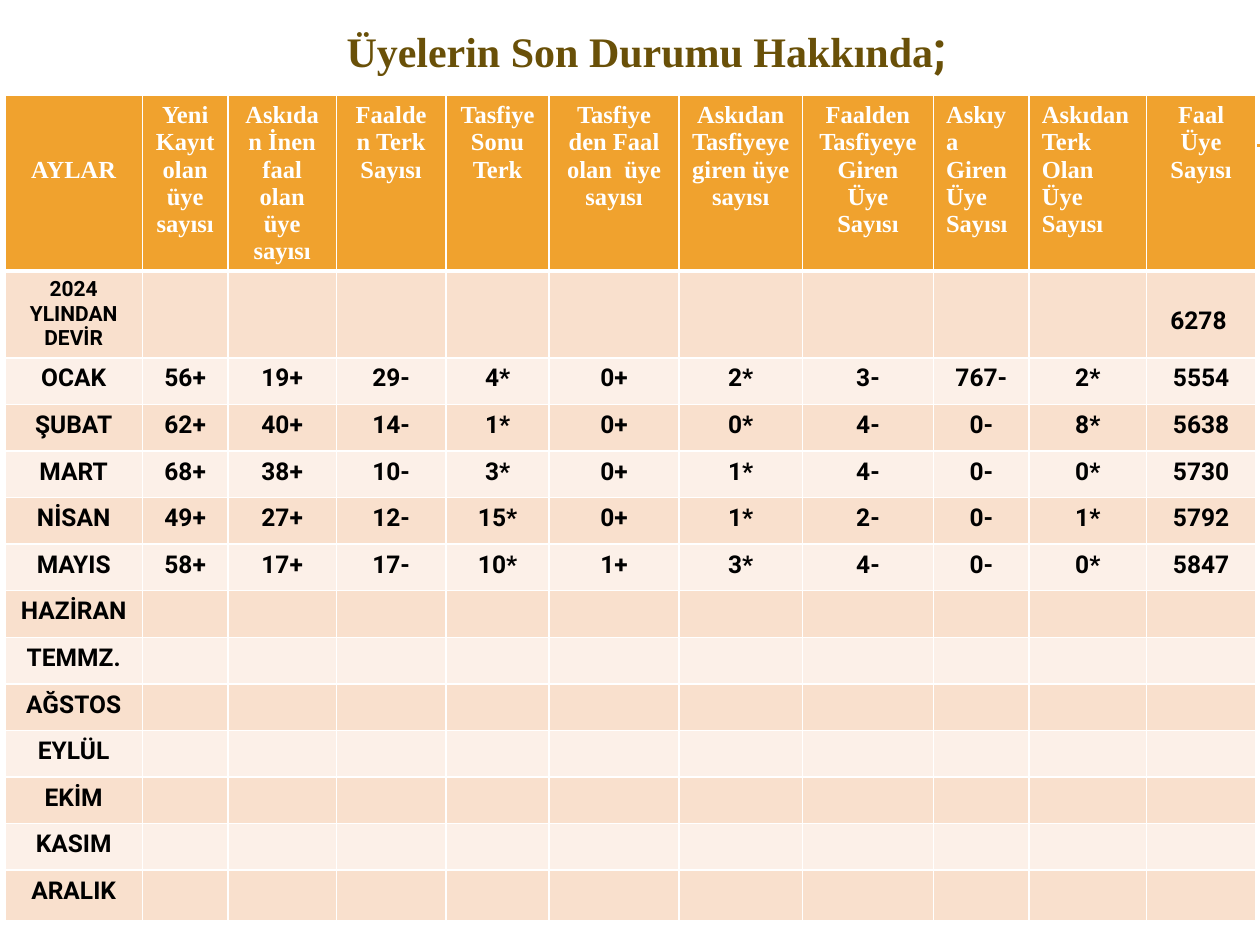
from lxml.etree import SubElement, Element
from pptx import Presentation
from pptx.dml.color import RGBColor
from pptx.enum.shapes import MSO_CONNECTOR
from pptx.enum.text import MSO_ANCHOR, PP_ALIGN
from pptx.oxml.ns import qn
from pptx.util import Inches, Pt

# Content
TITLE = "Üyelerin Son Durumu Hakkında"
HEADS = [
    "AYLAR", "Yeni Kayıt olan üye sayısı", "Askıdan İnen faal olan üye sayısı",
    "Faalden Terk Sayısı", "Tasfiye Sonu Terk",
    "Tasfiye den Faal olan  üye sayısı", "Askıdan Tasfiyeye giren üye sayısı",
    "Faalden Tasfiyeye Giren Üye Sayısı", "Askıya Giren Üye Sayısı",
    "Askıdan Terk Olan Üye Sayısı", "Faal Üye Sayısı",
]
CARRY = ["2024 YLINDAN DEVİR"] + [""] * 9 + ["6278"]
MONTHS = [
    ("OCAK", "56+ 19+ 29- 4* 0+ 2* 3- 767- 2* 5554"),
    ("ŞUBAT", "62+ 40+ 14- 1* 0+ 0* 4- 0- 8* 5638"),
    ("MART", "68+ 38+ 10- 3* 0+ 1* 4- 0- 0* 5730"),
    ("NİSAN", "49+ 27+ 12- 15* 0+ 1* 2- 0- 1* 5792"),
    ("MAYIS", "58+ 17+ 17- 10* 1+ 3* 4- 0- 0* 5847"),
    ("HAZİRAN", ""), ("TEMMZ.", ""), ("AĞSTOS", ""), ("EYLÜL", ""),
    ("EKİM", ""), ("KASIM", ""), ("ARALIK", ""),
]
WIDTHS = [1.09, 0.68, 0.86, 0.87, 0.82, 1.03, 0.98, 1.04, 0.76, 0.93, 0.87]
HEIGHTS = [1.39, 0.69] + [0.37] * 11 + [0.4]

# Formats
ORANGE = RGBColor(0xF0, 0xA2, 0x2E)
PEACH = RGBColor(0xF9, 0xE0, 0xCD)
CREAM = RGBColor(0xFC, 0xF0, 0xE8)
BROWN = RGBColor(0x69, 0x50, 0x08)
WHITE = RGBColor(0xFF, 0xFF, 0xFF)
BLACK = RGBColor(0, 0, 0)
SERIF, SANS = "Times New Roman", "Roboto"
HEAD = {"name": SERIF, "size": Pt(14), "bold": True}
BODY = {"name": SANS, "size": Pt(14), "bold": True}
SMALL = BODY | {"size": Pt(12)}
LEFT_HEADS = (8, 9)


def add_run(para, text, form, color):
    run = para.add_run()
    run.text = text
    for key, value in form.items():
        setattr(run.font, key, value)
    run.font.color.rgb = color


def add_edges(cell, top, base):
    props = cell._tc.get_or_add_tcPr()
    sides = {"a:lnL": 1, "a:lnR": 1, "a:lnT": top, "a:lnB": base}
    for spot, (tag, width) in enumerate(sides.items()):
        edge = Element(qn(tag), w=str(Pt(width)))
        fill = SubElement(edge, qn("a:solidFill"))
        SubElement(fill, qn("a:srgbClr"), val=str(WHITE))
        props.insert(spot, edge)


def fill_cell(cell, text, row, col):
    cell.fill.solid()
    cell.fill.fore_color.rgb = ORANGE if row == 0 else PEACH if row % 2 else CREAM
    add_edges(cell, 3 if row == 1 else 1, 3 if row == 0 else 1)
    para = cell.text_frame.paragraphs[0]
    if not text:
        SubElement(para._p, qn("a:endParaRPr"), sz="1400")
        return
    left = row == 0 and col in LEFT_HEADS
    para.alignment = PP_ALIGN.LEFT if left else PP_ALIGN.CENTER
    form = HEAD if row == 0 else SMALL if (row, col) == (1, 0) else BODY
    add_run(para, text, form, WHITE if row == 0 else BLACK)


deck = Presentation()
deck.slide_width, deck.slide_height = Inches(10), Inches(7.5)
slide = deck.slides.add_slide(deck.slide_layouts[6])
shapes = slide.shapes

# Rules behind the table
for y in (1.15, 1.16):
    rule = shapes.add_connector(MSO_CONNECTOR.STRAIGHT, Inches(0.56), Inches(y),
                                Inches(10), Inches(y))
    rule.line.color.rgb = ORANGE
    rule.line.width = Pt(0.75)
    SubElement(rule._element.spPr, qn("a:effectLst"))

# Table of members
rows = [HEADS, CARRY]
for month, counts in MONTHS:
    rows.append([month] + (counts.split() or [""] * (len(HEADS) - 1)))
table = shapes.add_table(len(rows), len(HEADS), Inches(0.04), Inches(0.76),
                         Inches(sum(WIDTHS)), Inches(sum(HEIGHTS))).table
table.horz_banding = False
for column, width in zip(table.columns, WIDTHS):
    column.width = Inches(width)
for line, height in zip(table.rows, HEIGHTS):
    line.height = Inches(height)
for r, row in enumerate(rows):
    for c, text in enumerate(row):
        fill_cell(table.cell(r, c), text, r, c)

# Cells whose text sits lower
table.cell(0, 0).margin_top = Inches(0.48)
total = table.cell(1, len(HEADS) - 1)
total.margin_top, total.margin_left = Inches(0.28), Inches(0.19)
total.text_frame.paragraphs[0].alignment = PP_ALIGN.LEFT

# Title
box = shapes.add_textbox(Inches(0.62), Inches(0), Inches(9.02), Inches(0.76))
frame = box.text_frame
frame.word_wrap = True
frame.vertical_anchor = MSO_ANCHOR.MIDDLE
para = frame.paragraphs[0]
para.alignment = PP_ALIGN.CENTER
add_run(para, TITLE, HEAD | {"size": Pt(24)}, BROWN)
add_run(para, ";", BODY | {"size": Pt(28)}, BROWN)

deck.save("out.pptx")
